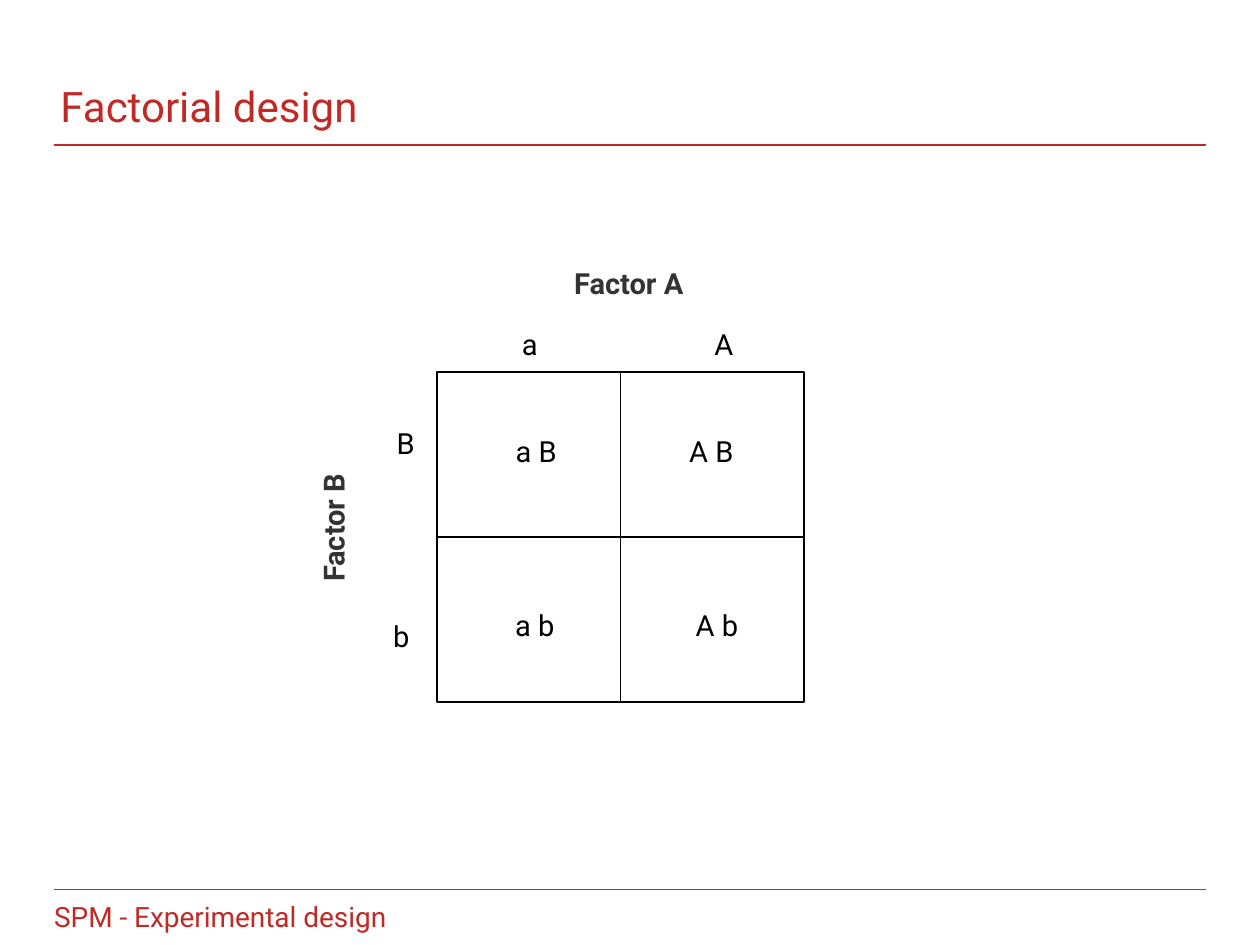
"""Build the factorial design slide with its two-by-two grid."""
from dataclasses import dataclass

from lxml import etree
from pptx import Presentation
from pptx.dml.color import RGBColor
from pptx.enum.shapes import MSO_CONNECTOR, MSO_SHAPE
from pptx.enum.text import MSO_ANCHOR, MSO_AUTO_SIZE, PP_ALIGN
from pptx.oxml.ns import qn
from pptx.slide import Slide
from pptx.text.text import TextFrame
from pptx.util import Inches, Pt

LINE, RECT = MSO_CONNECTOR.STRAIGHT, MSO_SHAPE.RECTANGLE
LEFT, CENTER, BOTTOM = PP_ALIGN.LEFT, PP_ALIGN.CENTER, MSO_ANCHOR.BOTTOM
NO_FIT, GROW = MSO_AUTO_SIZE.NONE, MSO_AUTO_SIZE.SHAPE_TO_FIT_TEXT


@dataclass(frozen=True)
class Theme:
    font: str = "Roboto"
    red: str = "C02A26"
    gray: str = "333333"
    black: str = "000000"
    white: str = "FFFFFF"
    title: float = 24
    foot: float = 16
    label: float = 16.6
    rule: float = 1


@dataclass(frozen=True)
class Label:
    text: str
    left: float
    top: float
    width: float
    head: bool = False
    turn: float = 0


THEME = Theme()
GRID_LEFT, GRID_TOP, GRID_WIDTH, GRID_HEIGHT = 3.47, 2.95, 2.91, 2.62
LABEL_HEIGHT = 0.38
SIDE_LEFT, SIDE_RIGHT = 0.43, 9.57
RULES = (1.15, 7.06)
NAMES_TOP, UPPER_TOP, LOWER_TOP = 2.54, 3.39, 4.77
LABELS = (
    Label("Factor A", 4.42, 2.06, 1.14, head=True),
    Label("Factor B", 2.07, 4, 1.15, head=True, turn=270),
    Label("b", 3.02, 4.86, 0.33),
    Label("B", 3.04, 3.33, 0.36),
    Label("a", 4.04, NAMES_TOP, 0.33),
    Label("A", 5.56, NAMES_TOP, 0.37),
    Label("a b", 3.98, LOWER_TOP, 0.53),
    Label("a B", 3.98, UPPER_TOP, 0.55),
    Label("A B", 5.36, UPPER_TOP, 0.57),
    Label("A b", 5.42, LOWER_TOP, 0.54),
)


def add_run(frame: TextFrame, text: str, size: float, color: str,
            bold: bool = False, align: PP_ALIGN = LEFT) -> None:
    """Add one styled run to the first paragraph."""
    para = frame.paragraphs[0]
    para.alignment = align
    run = para.add_run()
    run.text = text
    font = run.font
    font.name, font.size, font.bold = THEME.font, Pt(size), bold
    font.color.rgb = RGBColor.from_string(color)


def clear_insets(frame: TextFrame) -> None:
    """Set all four insets to zero."""
    frame.margin_left = frame.margin_right = 0
    frame.margin_top = frame.margin_bottom = 0


def draw_line(slide: Slide, x1: float, y1: float, x2: float, y2: float,
              color: str) -> None:
    """Draw a thin straight line without a shadow."""
    line = slide.shapes.add_connector(
        LINE, Inches(x1), Inches(y1), Inches(x2), Inches(y2))
    line.line.color.rgb = RGBColor.from_string(color)
    line.line.width = Pt(THEME.rule)
    etree.SubElement(line._element.spPr, qn("a:effectLst"))


def draw_grid(slide: Slide) -> None:
    """Draw the outer box and the two lines that halve it."""
    box = slide.shapes.add_shape(RECT, Inches(GRID_LEFT), Inches(GRID_TOP),
                                 Inches(GRID_WIDTH), Inches(GRID_HEIGHT))
    box.shadow.inherit = False
    box.fill.solid()
    box.fill.fore_color.rgb = RGBColor.from_string(THEME.white)
    box.line.color.rgb = RGBColor.from_string(THEME.black)
    box.line.width = Pt(THEME.rule)
    right, bottom = GRID_LEFT + GRID_WIDTH, GRID_TOP + GRID_HEIGHT
    mid_x, mid_y = GRID_LEFT + GRID_WIDTH / 2, GRID_TOP + GRID_HEIGHT / 2
    draw_line(slide, GRID_LEFT, mid_y, right, mid_y, THEME.black)
    draw_line(slide, mid_x, GRID_TOP, mid_x, bottom, THEME.black)


def draw_label(slide: Slide, label: Label) -> None:
    """Draw one label of the grid."""
    box = slide.shapes.add_textbox(Inches(label.left), Inches(label.top),
                                   Inches(label.width), Inches(LABEL_HEIGHT))
    box.rotation = label.turn
    frame = box.text_frame
    frame.word_wrap, frame.auto_size = False, GROW
    color = THEME.gray if label.head else THEME.black
    add_run(frame, label.text, THEME.label, color, label.head, CENTER)


def draw_title(slide: Slide, text: str) -> None:
    """Place and fill the title."""
    title = slide.shapes.title
    title.left, title.top = Inches(0.48), Inches(0.17)
    title.width, title.height = Inches(7.56), Inches(0.87)
    frame = title.text_frame
    clear_insets(frame)
    frame.auto_size, frame.vertical_anchor = NO_FIT, BOTTOM
    add_run(frame, text, THEME.title, THEME.red)


def draw_foot(slide: Slide, text: str) -> None:
    """Draw the line of text at the foot."""
    box = slide.shapes.add_textbox(Inches(SIDE_LEFT), Inches(7.14),
                                   Inches(4.39), Inches(0.24))
    frame = box.text_frame
    clear_insets(frame)
    frame.word_wrap = True
    add_run(frame, text, THEME.foot, THEME.red)


def main() -> None:
    """Build and save the slide."""
    deck = Presentation()
    deck.slide_width, deck.slide_height = Inches(10), Inches(7.5)
    slide = deck.slides.add_slide(deck.slide_layouts[5])
    for top in RULES:
        draw_line(slide, SIDE_LEFT, top, SIDE_RIGHT, top, THEME.red)
    draw_foot(slide, "SPM - Experimental design")
    draw_grid(slide)
    for label in LABELS:
        draw_label(slide, label)
    draw_title(slide, "Factorial design")
    deck.save("out.pptx")


if __name__ == "__main__":
    main()
